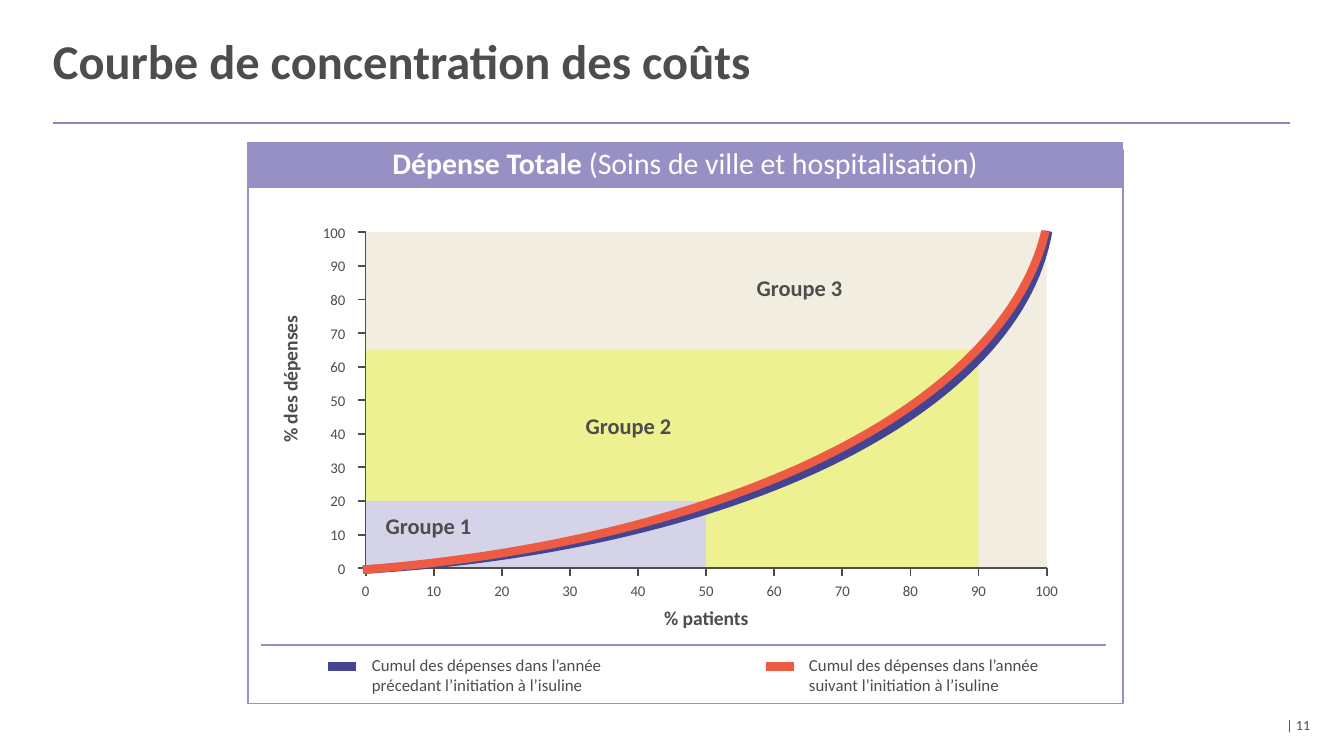
from lxml import etree
from pptx import Presentation
from pptx.dml.color import RGBColor
from pptx.enum.shapes import MSO_CONNECTOR as CONN, MSO_SHAPE as SHAPE
from pptx.enum.text import MSO_ANCHOR as ANCHOR, PP_ALIGN as ALIGN
from pptx.oxml.ns import qn
from pptx.util import Cm, Pt

# Content
TITLE = "Courbe de concentration des coûts"
HEADER = [("Dépense Totale", True), (" (Soins de ville et hospitalisation)", False)]
PAGE = "| 11"
X_TITLE, Y_TITLE = "% patients", "% des dépenses"
TICKS = range(0, 101, 10)
# name, % patients, % expenses, colour, label left and top (cm)
GROUPS = [
    ("Groupe 3", 100, 100, "beige", 14.05, 5.05),
    ("Groupe 2", 90, 65, "yellow", 10.82, 7.67),
    ("Groupe 1", 50, 20, "lilac", 7.04, 9.55),
]
# Bezier control points (cm)
CURVES = [
    ("navy", [(6.86, 10.77), (14.07, 10.34), (19.23, 7.72), (19.81, 4.37)]),
    ("coral", [(6.86, 10.77), (13.67, 10.24), (18.95, 7.75), (19.76, 4.37)]),
]
# text, colour, key left, text left, text width (cm)
LEGEND = [
    ("Cumul des dépenses dans l’année précedant l’initiation à l’isuline",
     "navy", 6.2, 6.78, 5.94),
    ("Cumul des dépenses dans l’année suivant l’initiation à l’isuline",
     "coral", 14.48, 15.04, 5.66),
]
COLORS = {
    "text": "4D4D4D", "white": "FFFFFF", "purple": "9690C4", "rule": "8686C7",
    "beige": "F2EDE1", "yellow": "EDF192", "lilac": "D5D3E7",
    "navy": "444492", "coral": "ED5B43",
}
FONT = "Calibri"

# Plot area (cm)
LEFT, BASE, PLOT_W, PLOT_H = 6.91, 10.74, 12.87, 6.35
TICK = 0.14

prs = Presentation()
prs.slide_width, prs.slide_height = Cm(25.4), Cm(14.29)
s = prs.slides.add_slide(prs.slide_layouts[6])


def rgb(name):
    return RGBColor.from_string(COLORS[name])


def px(pct):
    return LEFT + PLOT_W * pct / 100


def py(pct):
    return BASE - PLOT_H * pct / 100


def add_line(x1, y1, x2, y2, color, width):
    c = s.shapes.add_connector(CONN.STRAIGHT, Cm(x1), Cm(y1), Cm(x2), Cm(y2))
    c.line.color.rgb, c.line.width = rgb(color), Pt(width)
    etree.SubElement(c._element.spPr, qn("a:effectLst"))


def add_rect(x, y, w, h, fill, line=None, width=1):
    sp = s.shapes.add_shape(SHAPE.RECTANGLE, Cm(x), Cm(y), Cm(w), Cm(h))
    sp.shadow.inherit = False
    sp.fill.solid()
    sp.fill.fore_color.rgb = rgb(fill)
    if line:
        sp.line.color.rgb, sp.line.width = rgb(line), Pt(width)
    else:
        sp.line.fill.background()
    return sp


def style(p, size, color="text", bold=None, align=ALIGN.LEFT, spacing=None):
    p.alignment = align
    p.font.name, p.font.size, p.font.bold = FONT, Pt(size), bold
    p.font.color.rgb = rgb(color)
    if spacing:
        p.line_spacing = spacing


def add_text(text, x, y, w, h, size, wrap=False, inset=True, **fmt):
    tb = s.shapes.add_textbox(Cm(x), Cm(y), Cm(w), Cm(h))
    tf = tb.text_frame
    tf.word_wrap = wrap
    if not inset:
        tf.margin_left = tf.margin_right = tf.margin_top = tf.margin_bottom = 0
    p = tf.paragraphs[0]
    p.text = text
    style(p, size, **fmt)
    return tb


def add_path(points, color, width):
    pts = [(Cm(x), Cm(y)) for x, y in points]
    fb = s.shapes.build_freeform(*pts[0])
    fb.add_line_segments(pts[1:], close=False)
    sp = fb.convert_to_shape()
    sp.shadow.inherit = False
    sp.fill.background()
    sp.line.color.rgb, sp.line.width = rgb(color), Pt(width)


def bezier(ctrl, steps=60):
    for i in range(steps + 1):
        t = i / steps
        weights = ((1 - t) ** 3, 3 * t * (1 - t) ** 2, 3 * t * t * (1 - t), t ** 3)
        yield tuple(sum(k * c[axis] for k, c in zip(weights, ctrl)) for axis in (0, 1))


# Title and rule
add_line(1, 2.32, 24.38, 2.32, "rule", 1)
tb = add_text(TITLE, 1, 0.33, 23.77, 1.75, 26, wrap=True, inset=False,
              bold=True, spacing=0.9)
tb.text_frame.vertical_anchor = ANCHOR.MIDDLE

# Panel and its header
add_rect(4.68, 2.84, 16.54, 10.46, "white", "purple")
header = add_rect(4.68, 2.69, 16.54, 0.86, "purple", "purple", 0.75)
tf = header.text_frame
tf.word_wrap, tf.vertical_anchor = True, ANCHOR.MIDDLE
tf.margin_top, tf.margin_bottom = Cm(0.2), Cm(0.13)
p = tf.paragraphs[0]
style(p, 16, "white", align=ALIGN.CENTER, spacing=Pt(14.2))
for text, bold in HEADER:
    r = p.add_run()
    r.text, r.font.bold = text, bold

# Group areas, then their labels
for name, x, y, color, *_ in GROUPS:
    add_rect(LEFT, py(y), px(x) - LEFT, BASE - py(y), color)
for name, x, y, color, left, top in GROUPS:
    add_text(name, left, top, 2.16, 0.76, 12, bold=True)

# Axes, ticks and tick labels
add_path([(LEFT, py(100)), (LEFT, BASE), (px(100), BASE)], "text", 0.75)
for v in TICKS:
    add_line(LEFT, py(v), LEFT - TICK, py(v), "text", 1)
    add_text(str(v), 5.84, py(v) - 0.29, 0.94, 0.58, 7.9, align=ALIGN.RIGHT)
    add_line(px(v), BASE, px(v), BASE + TICK, "text", 1)
    add_text(str(v), px(v) - 0.47, 10.87, 0.94, 0.58, 7.9, align=ALIGN.CENTER)

# Axis titles
add_text(X_TITLE, 12.27, 11.33, 2.16, 0.71, 10.5, bold=True, align=ALIGN.CENTER)
tb = add_text(Y_TITLE, 4.01, 6.81, 2.95, 0.71, 10.5, bold=True, align=ALIGN.CENTER)
tb.rotation = 270

# Concentration curves
for color, ctrl in CURVES:
    add_path(list(bezier(ctrl)), color, 4.5)

# Legend
add_line(4.93, 12.19, 20.9, 12.19, "purple", 0.75)
for text, color, key, left, width in LEGEND:
    add_line(key, 12.6, key + 0.53, 12.6, color, 4.5)
    add_text(text, left, 12.27, width, 1.02, 9, wrap=True, spacing=Pt(10.5))

# Page number
add_text(PAGE, 24.31, 13.54, 1.09, 0.48, 7.5, wrap=True, inset=False)

prs.save("out.pptx")
